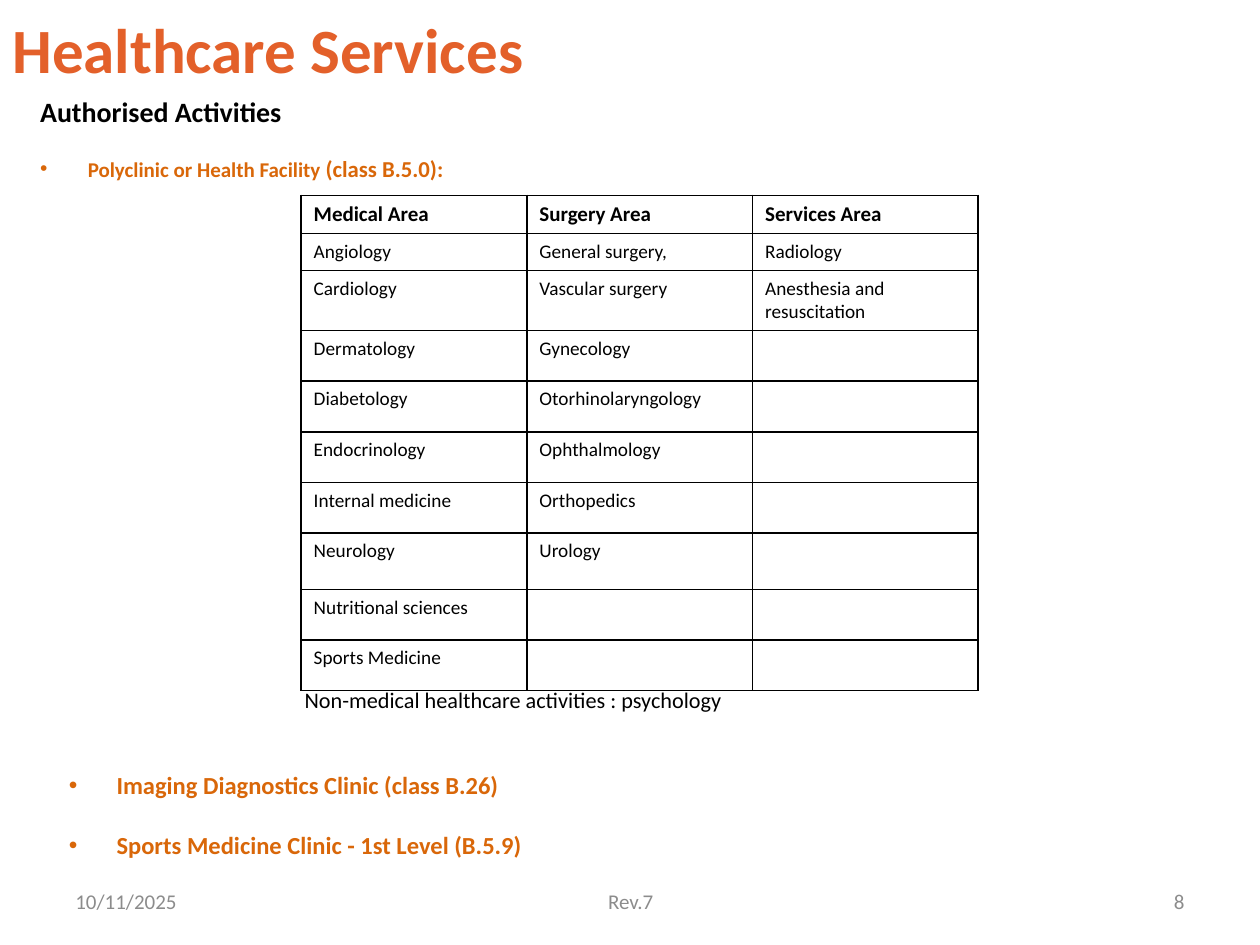
"""Build the Healthcare Services slide with its table of authorised activities."""
import pptx
import pptx.dml.color
import pptx.enum.text
import pptx.oxml
import pptx.oxml.ns
import pptx.util

Cm = pptx.util.Cm
Pt = pptx.util.Pt
ALIGN = pptx.enum.text.PP_ALIGN
ANCHOR = pptx.enum.text.MSO_ANCHOR

ORANGE, TITLE, BLACK, GREY = "D96709", "E3602A", "000000", "8C8C8C"
INDENT = 0.96
BULLET = {"alignment": ALIGN.JUSTIFY, "line_spacing": 1.5, "space_after": Pt(6)}
NOTE = {"alignment": ALIGN.JUSTIFY, "line_spacing": 1.3, "space_after": Pt(6)}

TEXTS = [
    {"at": (0, -0.13, 22.86, 2.21), "anchor": ANCHOR.MIDDLE, "color": TITLE, "bold": True,
     "paras": [[("Healthcare Services", 36)]]},
    {"at": (0.56, 1.78, 12.7, 0.94), "color": BLACK, "bold": True,
     "paras": [[("Authorised Activities", 16)]]},
    {"at": (0.56, 2.72, 9.3, 1.42), "color": ORANGE, "bold": True, "format": BULLET, "bullet": True,
     "paras": [[("Polyclinic or Health Facility ", 12), ("(class B.5.0):", 13)]]},
    {"at": (5.89, 13.54, 13.82, 1.22), "color": BLACK, "format": NOTE,
     "paras": [[("Non-medical healthcare activities : psychology", 12.7)]]},
    {"at": (1.14, 15.11, 18.6, 2.6), "color": ORANGE, "bold": True, "format": BULLET, "bullet": True,
     "paras": [[("Imaging Diagnostics Clinic (class B.26)", 14)],
               [("Sports Medicine Clinic - 1st Level (B.5.9)", 14)]]},
]

FOOTERS = [
    ("10/11/2025", 1.27, 5.92, ALIGN.LEFT),
    ("Rev.7", 8.69, 8.05, ALIGN.CENTER),
    ("8", 18.21, 5.92, ALIGN.RIGHT),
]

AREAS = {
    "Medical Area": ["Angiology", "Cardiology", "Dermatology", "Diabetology", "Endocrinology",
                     "Internal medicine", "Neurology", "Nutritional sciences", "Sports Medicine"],
    "Surgery Area": ["General surgery,", "Vascular surgery", "Gynecology", "Otorhinolaryngology",
                     "Ophthalmology", "Orthopedics", "Urology"],
    "Services Area": ["Radiology", "Anesthesia and resuscitation"],
}
ROW_HEIGHTS = [0.74, 0.74, 1.19, 1.02, 1.02, 1.02, 1.02, 1.14, 1.02, 1.02]
TABLE_LEFT, TABLE_TOP, COLUMN_WIDTH = 6.07, 3.94, 4.55


def rgb(value):
    """Return the colour for a hex string."""
    return pptx.dml.color.RGBColor.from_string(value)


def set_all(target, values):
    """Set each named value as an attribute of the target."""
    for name, value in values.items():
        setattr(target, name, value)


def add_span(para, text, size, color, bold=False):
    """Add a run of formatted text to a paragraph."""
    span = para.add_run()
    span.text = text
    set_all(span.font, {"name": "Calibri", "size": Pt(size), "bold": bold})
    span.font.color.rgb = rgb(color)


def add_bullet(para):
    """Give a paragraph a hanging bullet."""
    properties = para._p.get_or_add_pPr()
    properties.set("marL", str(Cm(INDENT)))
    properties.set("indent", str(-Cm(INDENT)))
    for tag, name, value in (("a:buFont", "typeface", "Arial"), ("a:buChar", "char", "•")):
        element = pptx.oxml.parse_xml(f"<{tag} {pptx.oxml.ns.nsdecls('a')} {name}='{value}'/>")
        properties.append(element)


def add_text(page, block):
    """Add a text box holding the paragraphs of a block."""
    box = page.shapes.add_textbox(*map(Cm, block["at"]))
    frame = box.text_frame
    set_all(frame, {"word_wrap": True, "vertical_anchor": block.get("anchor", ANCHOR.TOP)})
    for index, spans in enumerate(block["paras"]):
        para = frame.add_paragraph() if index else frame.paragraphs[0]
        if block.get("bullet"):
            add_bullet(para)
        set_all(para, block.get("format", {}))
        if index:
            para.space_before = Pt(2.8)
        for text, size in spans:
            add_span(para, text, size, block["color"], block.get("bold", False))


def add_borders(cell):
    """Draw a thin black line on all four sides of a cell."""
    properties = cell._tc.get_or_add_tcPr()
    for side in "LRTB":
        properties.append(pptx.oxml.parse_xml(
            f"<a:ln{side} {pptx.oxml.ns.nsdecls('a')} w='{Pt(1)}'>"
            f"<a:solidFill><a:srgbClr val='{BLACK}'/></a:solidFill></a:ln{side}>"))


def add_areas(page):
    """Add the table with one column for each area."""
    table = page.shapes.add_table(
        len(ROW_HEIGHTS), len(AREAS), Cm(TABLE_LEFT), Cm(TABLE_TOP),
        Cm(COLUMN_WIDTH * len(AREAS)), Cm(sum(ROW_HEIGHTS))).table
    set_all(table, {"first_row": False, "horz_banding": False})
    for row, height in zip(table.rows, ROW_HEIGHTS):
        row.height = Cm(height)
    for column, (area, activities) in enumerate(AREAS.items()):
        table.columns[column].width = Cm(COLUMN_WIDTH)
        entries = [area, *activities]
        for row in range(len(ROW_HEIGHTS)):
            cell = table.cell(row, column)
            add_borders(cell)
            cell.fill.background()
            para = cell.text_frame.paragraphs[0]
            if row < len(entries):
                add_span(para, entries[row], 11 if row else 12, BLACK, row == 0)
            else:
                para.font.size = Pt(11)


def main():
    """Build and save the deck."""
    deck = pptx.Presentation()
    set_all(deck, {"slide_width": Cm(25.4), "slide_height": Cm(19.05)})
    page = deck.slides.add_slide(deck.slide_layouts[6])
    add_areas(page)
    for block in TEXTS:
        add_text(page, block)
    for text, left, width, alignment in FOOTERS:
        add_text(page, {"at": (left, 17.65, width, 1.02), "anchor": ANCHOR.MIDDLE, "color": GREY,
                        "format": {"alignment": alignment}, "paras": [[(text, 12)]]})
    deck.save("out.pptx")


if __name__ == "__main__":
    main()
